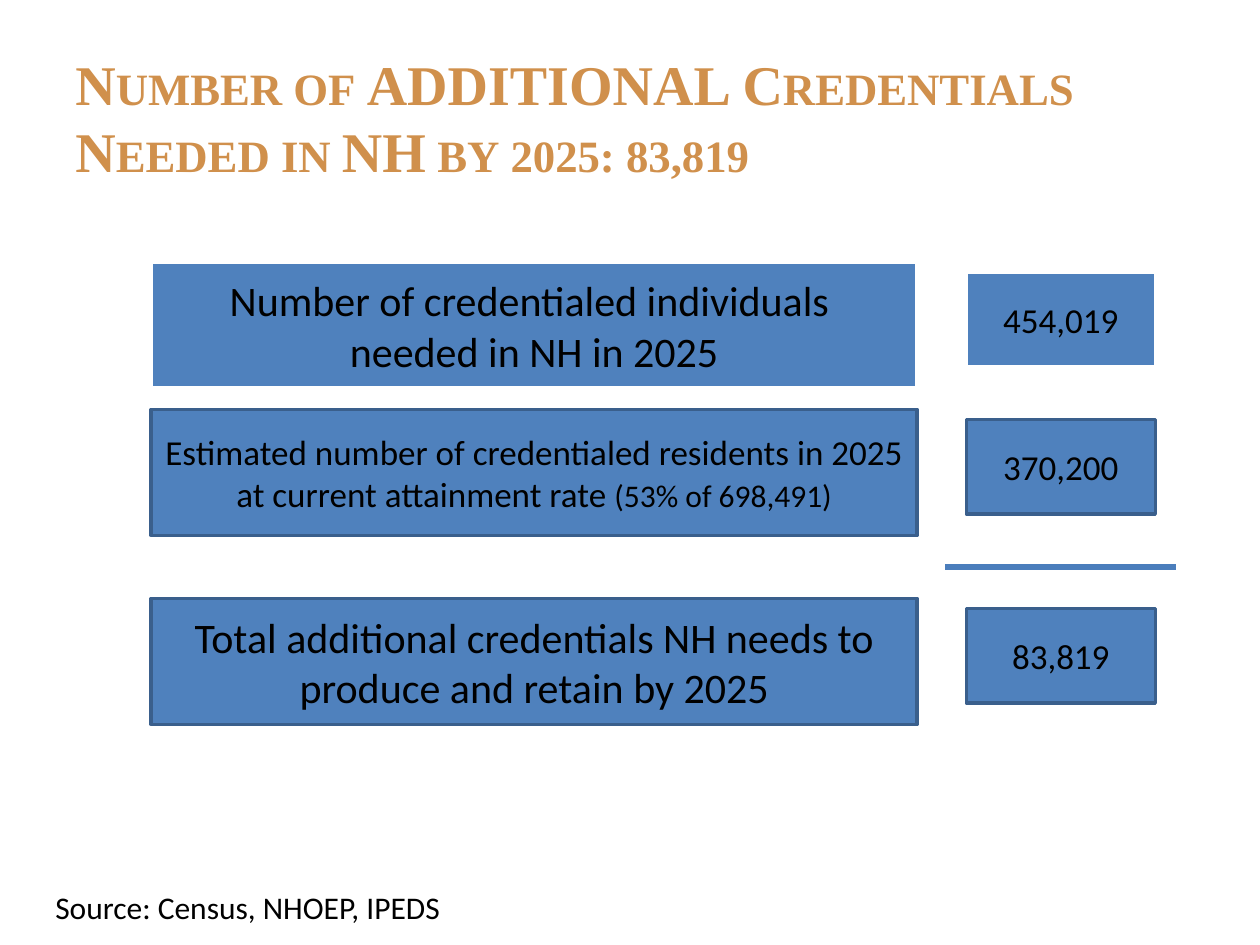
from pptx import Presentation
from pptx.dml.color import RGBColor
from pptx.enum import shapes, text
from pptx.oxml.ns import qn
from pptx.util import Inches, Pt
from lxml import etree

BLUE, EDGE, WHITE, BLACK = "4F81BD", "3A5F8C", "FFFFFF", "000000"
ROWS = [
    (2.08, WHITE, "454,019", 24,
     [[("Number of credentialed individuals ", 24)], [("needed in NH in 2025", 24)]]),
    (3.25, EDGE, "370,200", 20,
     [[("Estimated number of credentialed residents in 2025 "
        "at current attainment rate ", 20), ("(53% of 698,491)", 18)]]),
    (4.75, EDGE, "83,819", 24,
     [[("Total additional credentials NH needs to produce and retain by 2025", 24)]]),
]


def color(code):
    return RGBColor.from_string(code)


def style(run, size, code=BLACK, face="Calibri"):
    run.font.size = Pt(size)
    run.font.name = face
    run.font.color.rgb = color(code)


def add_title(slide, left, top, width, height):
    box = slide.shapes.add_textbox(left, top, width, height)
    frame = box.text_frame
    frame.word_wrap = True
    frame.vertical_anchor = text.MSO_ANCHOR.MIDDLE
    para = frame.paragraphs[0]
    para.text = "Number of ADDITIONAL Credentials \vNeeded in NH by 2025: 83,819"
    for run in para.runs:
        style(run, 32, "D0904C", "Times New Roman")
        run.font.bold = True
        run.font._element.set("cap", "small")


def add_box(slide, left, top, width, height, edge, paras):
    """Draw a blue box; each paragraph is a list of (words, size)."""
    box = slide.shapes.add_shape(shapes.MSO_SHAPE.RECTANGLE, left, top, width, height)
    box.shadow.inherit = False
    box.fill.solid()
    box.fill.fore_color.rgb = color(BLUE)
    box.line.color.rgb = color(edge)
    box.line.width = Pt(2)
    frame = box.text_frame
    frame.word_wrap = True
    frame.vertical_anchor = text.MSO_ANCHOR.MIDDLE
    for i, parts in enumerate(paras):
        para = frame.add_paragraph() if i else frame.paragraphs[0]
        para.alignment = text.PP_ALIGN.CENTER
        for words, size in parts:
            run = para.add_run()
            run.text = words
            style(run, size)


def add_row(slide, left, top, edge, value, label):
    """Draw a label box with its value box to the right."""
    add_box(slide, left, top, Inches(6.08), Inches(1), edge, label)
    add_box(slide, left + Inches(6.47), top + Inches(0.08), Inches(1.5), Inches(0.75),
            edge, [[(value, 20)]])


def add_rule(slide, left, top, width):
    rule = slide.shapes.add_connector(shapes.MSO_CONNECTOR.STRAIGHT,
                                      left, top, left + width, top)
    rule.line.color.rgb = color("4B7EBC")
    rule.line.width = Pt(3)
    etree.SubElement(rule._element.spPr, qn("a:effectLst"))


def add_source(slide, left, top, width, height):
    box = slide.shapes.add_textbox(left, top, width, height)
    box.text_frame.word_wrap = True
    box.text_frame.text = "Source: Census, NHOEP, IPEDS"
    style(box.text_frame.paragraphs[0].runs[0], 18)


def main():
    deck = Presentation()
    deck.slide_width, deck.slide_height = Inches(10), Inches(7.5)
    slide = deck.slides.add_slide(deck.slide_layouts[6])
    add_title(slide, Inches(0.5), Inches(0.3), Inches(9), Inches(1.25))
    for top, edge, value, _, label in ROWS:
        add_row(slide, Inches(1.2), Inches(top), edge, value, label)
    add_rule(slide, Inches(7.5), Inches(4.5), Inches(1.83))
    add_source(slide, Inches(0.34), Inches(7), Inches(3.52), Inches(0.4))
    deck.save("out.pptx")


if __name__ == "__main__":
    main()
